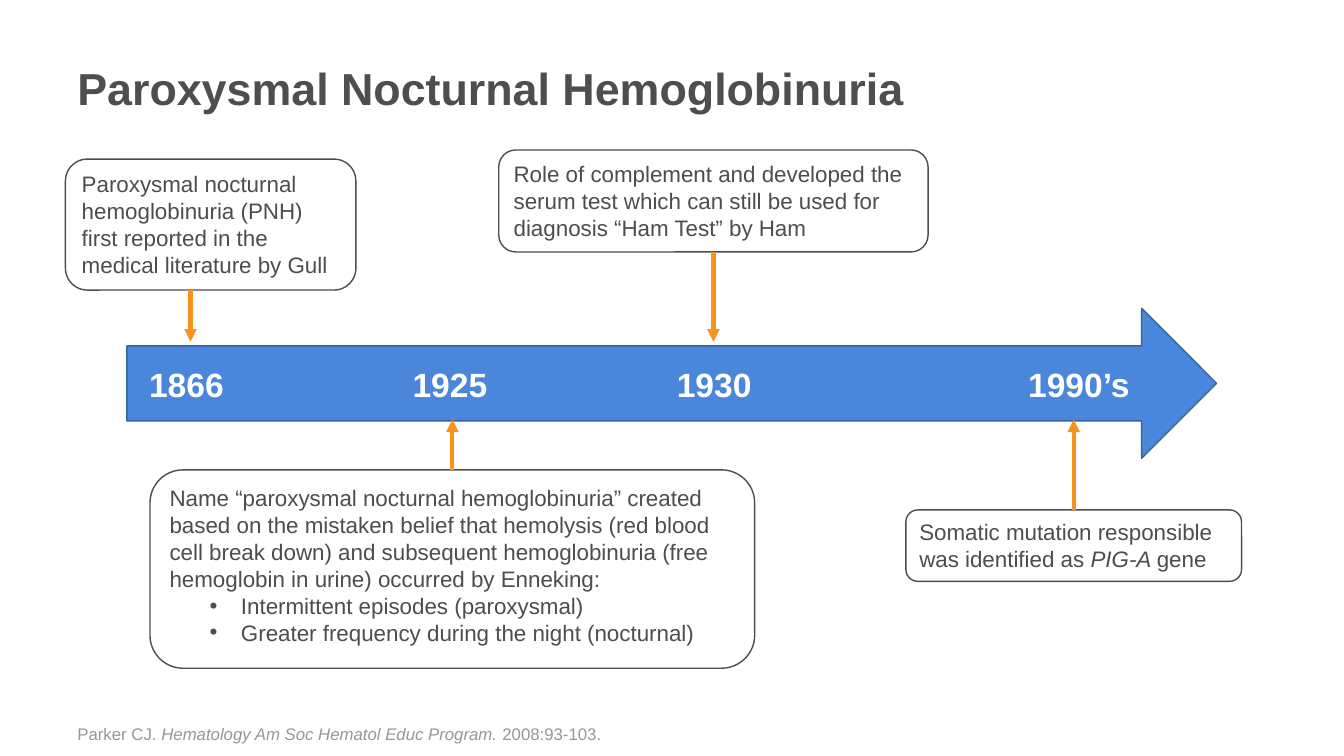
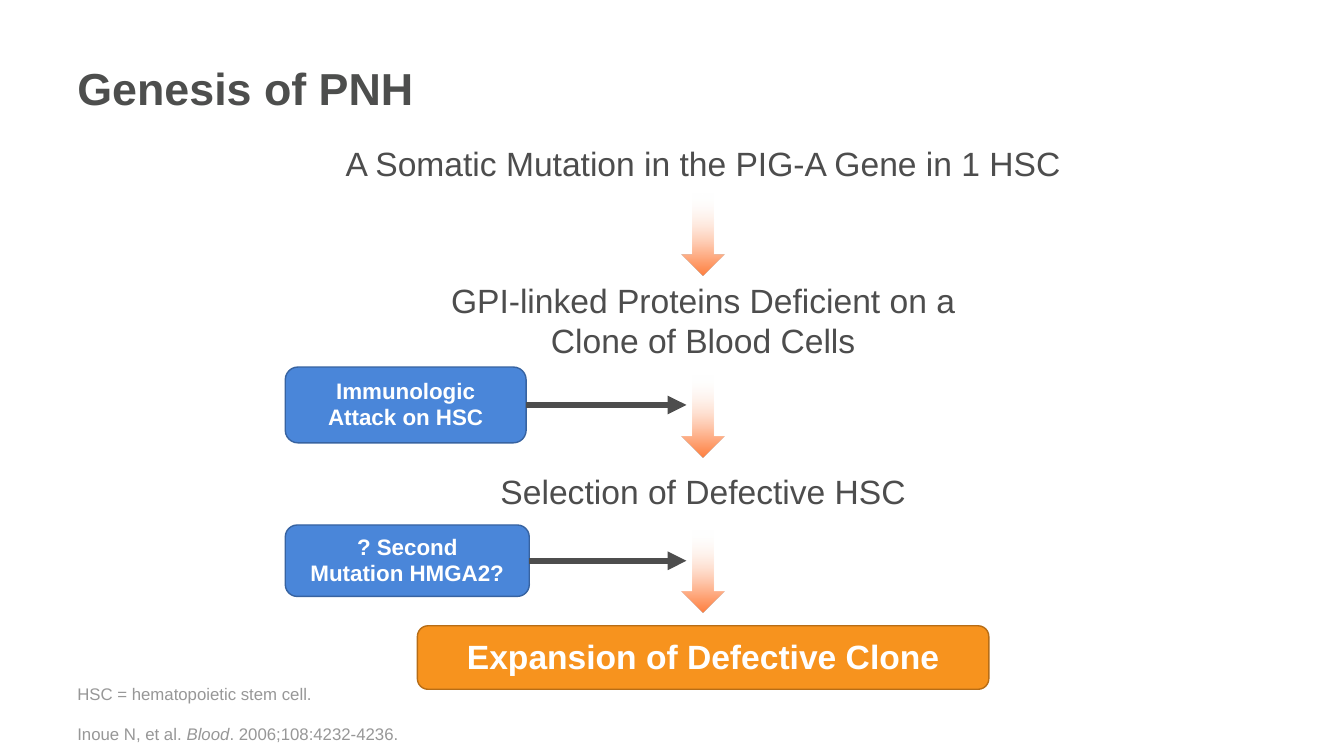
import pptx
import pptx.dml.color
import pptx.enum.shapes
import pptx.enum.text
import pptx.oxml
import pptx.oxml.ns
import pptx.util

Cm, Pt = pptx.util.Cm, pptx.util.Pt
SHAPE = pptx.enum.shapes.MSO_SHAPE
ANCHOR = pptx.enum.text.MSO_ANCHOR
ALIGN = pptx.enum.text.PP_ALIGN
qn = pptx.oxml.ns.qn

FONT = "Arial"
WHITE, INK, HEAD, GREY = "FFFFFF", "4D4D4D", "4D4E4D", "979797"
BLUE, NAVY, ORANGE, RUST, CORAL = "4A86D9", "3763A1", "F7931E", "B76D16", "FF7F40"
MID = 17.72  # centre of the flow on slide 2


def hue(code):
    return pptx.dml.color.RGBColor.from_string(code)


def node(tag, **attrs):
    item = pptx.oxml.parse_xml(f"<a:{tag} {pptx.oxml.ns.nsdecls('a')}/>")
    for key, value in attrs.items():
        item.set(key, str(value))
    return item


def bullet(par):
    props = par._p.get_or_add_pPr()
    props.set("marL", str(Cm(1.8)))
    props.set("indent", str(-Cm(0.79)))
    props.append(node("buFont", typeface=FONT))
    props.append(node("buChar", char="•"))


def write(shape, pars, size, color, bold=False, align=ALIGN.LEFT,
          anchor=ANCHOR.TOP, wrap=True, gap=0, pitch=None, dots=False):
    """Fill a shape with paragraphs, each a list of runs.

    A run between asterisks is italic; "\\n" breaks the line.
    With dots, all paragraphs after the first are bulleted.
    """
    frame = shape.text_frame
    frame.word_wrap = wrap
    frame.vertical_anchor = anchor
    for row, runs in enumerate(pars):
        par = frame.add_paragraph() if row else frame.paragraphs[0]
        par.alignment = align
        if pitch:
            par.line_spacing = pitch
        if row and gap:
            par.space_before = Pt(gap)
        if row and dots:
            bullet(par)
        for text in runs:
            if text == "\n":
                par.add_line_break()
                continue
            run = par.add_run()
            run.text = text.strip("*")
            font = run.font
            font.name, font.size, font.bold = FONT, Pt(size), bold
            font.italic = text.startswith("*")
            font.color.rgb = hue(color)


def label(slide, place, pars, size, color, **style):
    area = slide.shapes.add_textbox(*map(Cm, place))
    write(area, pars, size, color, **style)


def block(slide, kind, place, fill, line):
    shape = slide.shapes.add_shape(kind, *map(Cm, place))
    shape.shadow.inherit = False
    shape.fill.solid()
    shape.fill.fore_color.rgb = hue(fill)
    shape.line.color.rgb = hue(line)
    shape.line.width = Pt(1)
    return shape


def note(slide, place, pars):
    shape = block(slide, SHAPE.ROUNDED_RECTANGLE, place, WHITE, INK)
    write(shape, pars, 16, INK, dots=True)
    return shape


def badge(slide, place, runs, size, fill, line):
    shape = block(slide, SHAPE.ROUNDED_RECTANGLE, place, fill, line)
    write(shape, [runs], size, WHITE, bold=True, align=ALIGN.CENTER,
          anchor=ANCHOR.MIDDLE, wrap=False, pitch=0.95)
    return shape


def link(slide, start, end, color, width, source=None, side=0):
    """Draw an arrow, joined to a side of the source if one is given."""
    line = slide.shapes.add_connector(
        pptx.enum.shapes.MSO_CONNECTOR.STRAIGHT, *map(Cm, start + end))
    if source is not None:
        line.begin_connect(source, side)
    line.line.color.rgb = hue(color)
    line.line.width = Pt(width)
    line.line._get_or_add_ln().append(node("tailEnd", type="triangle"))
    line._element.spPr.append(node("effectLst"))


def drop(slide, top):
    """Draw a down arrow that fades in from clear white."""
    wide = 1.09
    shape = block(slide, SHAPE.DOWN_ARROW, (MID - wide / 2, top, wide, 2.44), CORAL, CORAL)
    shape.line.fill.background()
    shape.fill.gradient()
    shape.fill.gradient_angle = 270
    stops = shape._element.spPr.find(".//" + qn("a:gsLst"))
    for old in list(stops):
        stops.remove(old)
    for pos, code, alpha in ((15, WHITE, 0), (67, CORAL, 42), (100, CORAL, 100)):
        stop, color = node("gs", pos=pos * 1000), node("srgbClr", val=code)
        color.append(node("alpha", val=alpha * 1000))
        stop.append(color)
        stops.append(stop)


def page(deck, title, source):
    slide = deck.slides.add_slide(deck.slide_layouts[6])
    label(slide, (1.7, 0.56, 29.85, 3.3), [[title]], 32, HEAD,
          bold=True, anchor=ANCHOR.MIDDLE)
    label(slide, (1.7, 17.65, 29.85, 1.22), source, 12, GREY,
          anchor=ANCHOR.BOTTOM, gap=14)
    return slide


def story(deck):
    slide = page(deck, "Paroxysmal Nocturnal Hemoglobinuria", [
        ["Parker CJ. ", "*Hematology Am Soc Hematol Educ Program. *", "2008:93-103."]])
    first = note(slide, (1.65, 4.01, 7.32, 3.3), [[
        "Paroxysmal nocturnal hemoglobinuria (PNH) first reported in the "
        "medical literature by Gull"]])
    name = note(slide, (3.78, 11.84, 15.24, 5), [
        ["Name “paroxysmal nocturnal hemoglobinuria” created based on the "
         "mistaken belief that hemolysis (red blood cell break down) and "
         "subsequent hemoglobinuria (free hemoglobin in urine) occurred by Enneking:"],
        ["Intermittent episodes (paroxysmal)"],
        ["Greater frequency during the night (nocturnal)"]])
    test = note(slide, (12.57, 3.78, 10.82, 2.57), [[
        "Role of complement and developed the serum test which can still be "
        "used for diagnosis “Ham Test” by Ham"]])
    gene = note(slide, (22.83, 12.85, 8.46, 1.8), [[
        "Somatic mutation responsible was identified as ", "*PIG-A *", "gene"]])
    block(slide, SHAPE.RIGHT_ARROW, (3.2, 7.77, 27.46, 3.78), BLUE, NAVY)

    over, under = 8.61, 10.57
    link(slide, (4.8, (first.top + first.height) / Cm(1)), (4.8, over), ORANGE, 3)
    for source, side, tip in ((name, 0, under), (test, 2, over), (gene, 0, under)):
        mid = (source.left + source.width / 2) / Cm(1)
        link(slide, (mid, tip), (mid, tip), ORANGE, 3, source, side)
    for year, mid in (("1866", 4.7), ("1925", 11.34), ("1930", 18), ("1990’s", 27.19)):
        label(slide, (mid - 1.87, 9.04, 3.74, 1.27), [[year]], 24, WHITE,
              bold=True, align=ALIGN.CENTER)


def flow(deck):
    slide = page(deck, "Genesis of PNH", [
        ["HSC = hematopoietic stem cell."],
        ["Inoue N, et al. ", "*Blood*", ". 2006;108:4232-4236."]])
    for text, top, wide, high in (
            ("A Somatic Mutation in the PIG-A Gene in 1 HSC", 3.48, 22.43, 1.37),
            ("GPI-linked Proteins Deficient on a Clone of Blood Cells", 6.93, 14.17, 2.46),
            ("Selection of Defective HSC", 11.73, 12.01, 1.37)):
        label(slide, (MID - wide / 2, top, wide, high), [[text]], 24, INK,
              align=ALIGN.CENTER)
    for runs, top, wide, high in (
            (["Immunologic", "\n", "Attack on HSC"], 9.25, 6.07, 1.91),
            (["? Second", "\n", "Mutation HMGA2?"], 13.23, 6.15, 1.8)):
        cause = badge(slide, (7.19, top, wide, high), runs, 16, BLUE, NAVY)
        mid = top + high / 2
        link(slide, (7.19 + wide, mid), (17.3, mid), INK, 4.5, cause, 3)
    badge(slide, (MID - 7.2, 15.77, 14.4, 1.6),
          ["Expansion of Defective Clone"], 24, ORANGE, RUST)
    for top in (4.5, 9.09, 13):
        drop(slide, top)


def main():
    deck = pptx.Presentation()
    deck.slide_width, deck.slide_height = Cm(33.87), Cm(19.05)
    story(deck)
    flow(deck)
    deck.save("out.pptx")


if __name__ == "__main__":
    main()
